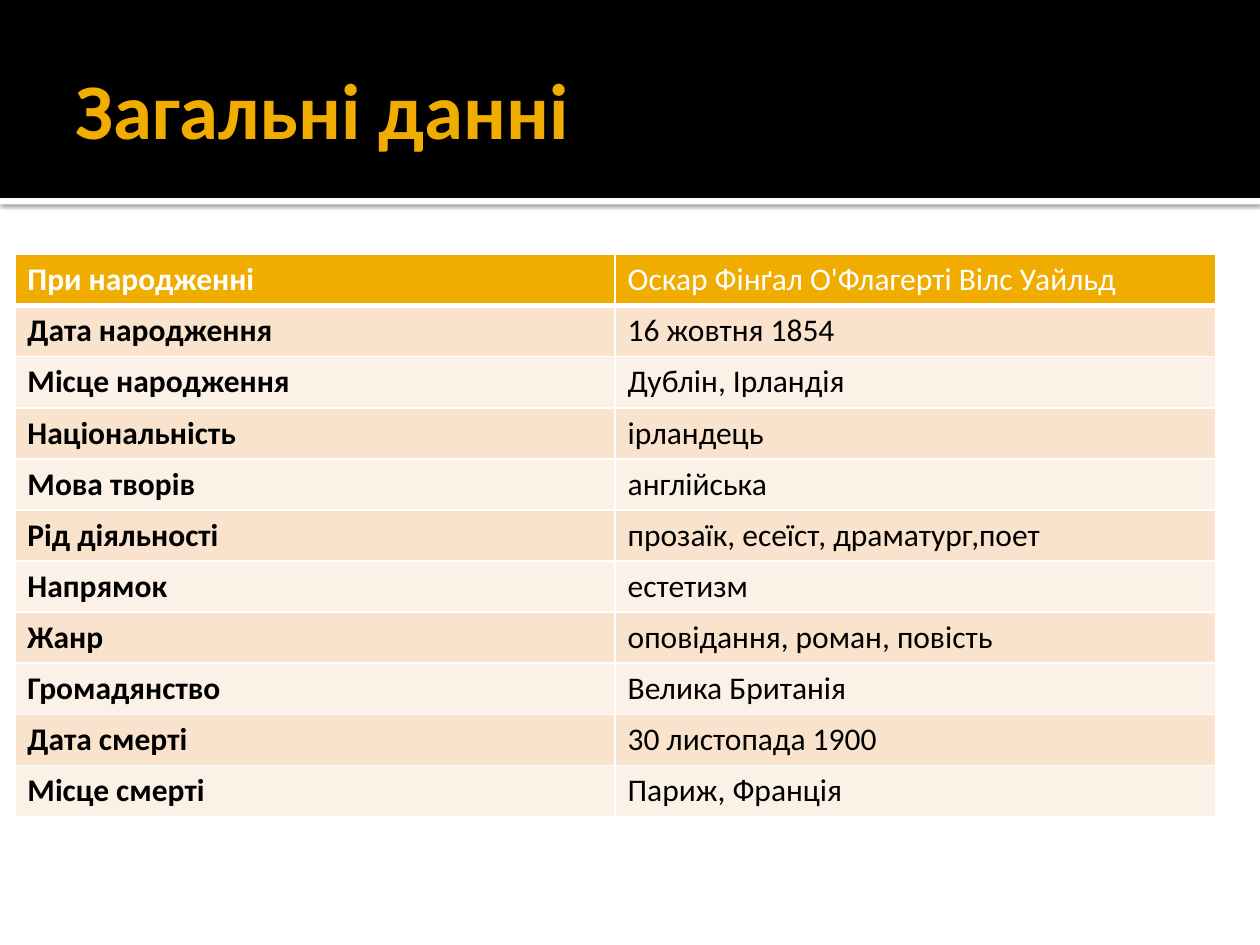
import dataclasses

import lxml.etree
import pptx
import pptx.dml.color
import pptx.enum.shapes
import pptx.enum.text
import pptx.oxml
import pptx.oxml.ns
import pptx.util

Cm = pptx.util.Cm
Pt = pptx.util.Pt
RGBColor = pptx.dml.color.RGBColor

BLACK = RGBColor(0x00, 0x00, 0x00)
WHITE = RGBColor(0xFF, 0xFF, 0xFF)
GOLD = RGBColor(0xF0, 0xAD, 0x00)
PEACH = RGBColor(0xF9, 0xE3, 0xCC)
CREAM = RGBColor(0xFC, 0xF1, 0xE7)

FONT = "Calibri"
SLIDE_WIDTH, SLIDE_HEIGHT = Cm(25.4), Cm(19.05)
BAND_HEIGHT = Cm(3.99)
TABLE_LEFT, TABLE_TOP = Cm(0.3), Cm(5.13)
COLUMN_WIDTH, ROW_HEIGHT = Cm(12.1), Cm(1.03)


@dataclasses.dataclass(frozen=True)
class Fact:
    label: str
    value: str


FACTS = [
    Fact("При народженні", "Оскар Фінґал О'Флагерті Вілс Уайльд"),
    Fact("Дата народження", "16 жовтня 1854"),
    Fact("Місце народження", "Дублін, Ірландія"),
    Fact("Національність", "ірландець"),
    Fact("Мова творів", "англійська"),
    Fact("Рід діяльності", "прозаїк, есеїст, драматург,поет"),
    Fact("Напрямок", "естетизм"),
    Fact("Жанр", "оповідання, роман, повість"),
    Fact("Громадянство", "Велика Британія"),
    Fact("Дата смерті", "30 листопада 1900"),
    Fact("Місце смерті", "Париж, Франція"),
]


def set_attributes(target: object, values: dict) -> None:
    for name, value in values.items():
        setattr(target, name, value)


def write_text(text_frame, text: str, size: float, color: RGBColor, bold: bool) -> None:
    paragraph = text_frame.paragraphs[0]
    paragraph.alignment = pptx.enum.text.PP_ALIGN.LEFT
    run = paragraph.add_run()
    run.text = text
    set_attributes(run.font, {"name": FONT, "size": Pt(size), "bold": bold})
    run.font.color.rgb = color


def add_band(slide, top: int, height: int, color: RGBColor):
    """Add a plain rectangle across the full slide width."""
    band = slide.shapes.add_shape(
        pptx.enum.shapes.MSO_SHAPE.RECTANGLE, 0, top, SLIDE_WIDTH, height
    )
    band.shadow.inherit = False
    band.fill.solid()
    band.fill.fore_color.rgb = color
    band.line.fill.background()
    return band


def add_drop_shadow(shape) -> None:
    effects = shape.element.spPr.find(pptx.oxml.ns.qn("a:effectLst"))
    effects.append(pptx.oxml.parse_xml(
        f'<a:outerShdw {pptx.oxml.ns.nsdecls("a")} blurRad="{Pt(2.5)}" dist="{Pt(0.8)}" '
        f'dir="5400000" rotWithShape="0"><a:srgbClr val="{BLACK}">'
        '<a:alpha val="60000"/></a:srgbClr></a:outerShdw>'
    ))


def add_title(slide, text: str) -> None:
    title = slide.shapes.title
    set_attributes(title, {
        "left": Cm(1.27), "top": Cm(0.43), "width": Cm(22.86), "height": Cm(3.48),
    })
    set_attributes(title.text_frame, {
        "margin_left": Cm(0.25), "margin_right": Cm(0.13),
        "margin_top": Cm(0.13), "margin_bottom": Cm(0.13),
        "vertical_anchor": pptx.enum.text.MSO_ANCHOR.MIDDLE, "word_wrap": True,
    })
    write_text(title.text_frame, text, 45, GOLD, True)
    # Bring the title in front of the black band.
    title.element.getparent().append(title.element)


def set_borders(cell, widths: dict[str, float]) -> None:
    properties = cell._tc.get_or_add_tcPr()
    for side, width in widths.items():
        line = lxml.etree.SubElement(
            properties, pptx.oxml.ns.qn(f"a:ln{side}"), w=str(Pt(width))
        )
        fill = lxml.etree.SubElement(line, pptx.oxml.ns.qn("a:solidFill"))
        lxml.etree.SubElement(fill, pptx.oxml.ns.qn("a:srgbClr"), val=str(WHITE))


def add_fact_table(slide, facts: list[Fact]) -> None:
    table = slide.shapes.add_table(
        len(facts), 2, TABLE_LEFT, TABLE_TOP, 2 * COLUMN_WIDTH, len(facts) * ROW_HEIGHT
    ).table
    for row, fact in enumerate(facts):
        is_header = row == 0
        fill_color = GOLD if is_header else (CREAM, PEACH)[row % 2]
        text_color = WHITE if is_header else BLACK
        borders = {
            "L": 1, "R": 1,
            "T": 3 if row == 1 else 1,
            "B": 3 if is_header else 1,
        }
        for column, text in enumerate((fact.label, fact.value)):
            cell = table.cell(row, column)
            set_borders(cell, borders)
            cell.fill.solid()
            cell.fill.fore_color.rgb = fill_color
            write_text(cell.text_frame, text, 18, text_color, column == 0)


def main() -> None:
    presentation = pptx.Presentation()
    set_attributes(presentation, {
        "slide_width": SLIDE_WIDTH, "slide_height": SLIDE_HEIGHT,
    })
    slide = presentation.slides.add_slide(presentation.slide_layouts.get_by_name("Title Only"))
    slide.background.fill.solid()
    slide.background.fill.fore_color.rgb = WHITE

    white_strip = add_band(slide, BAND_HEIGHT, Cm(0.13), WHITE)
    add_drop_shadow(white_strip)
    add_band(slide, 0, BAND_HEIGHT, BLACK)
    add_title(slide, "Загальні данні")
    add_fact_table(slide, FACTS)
    presentation.save("out.pptx")


if __name__ == "__main__":
    main()
